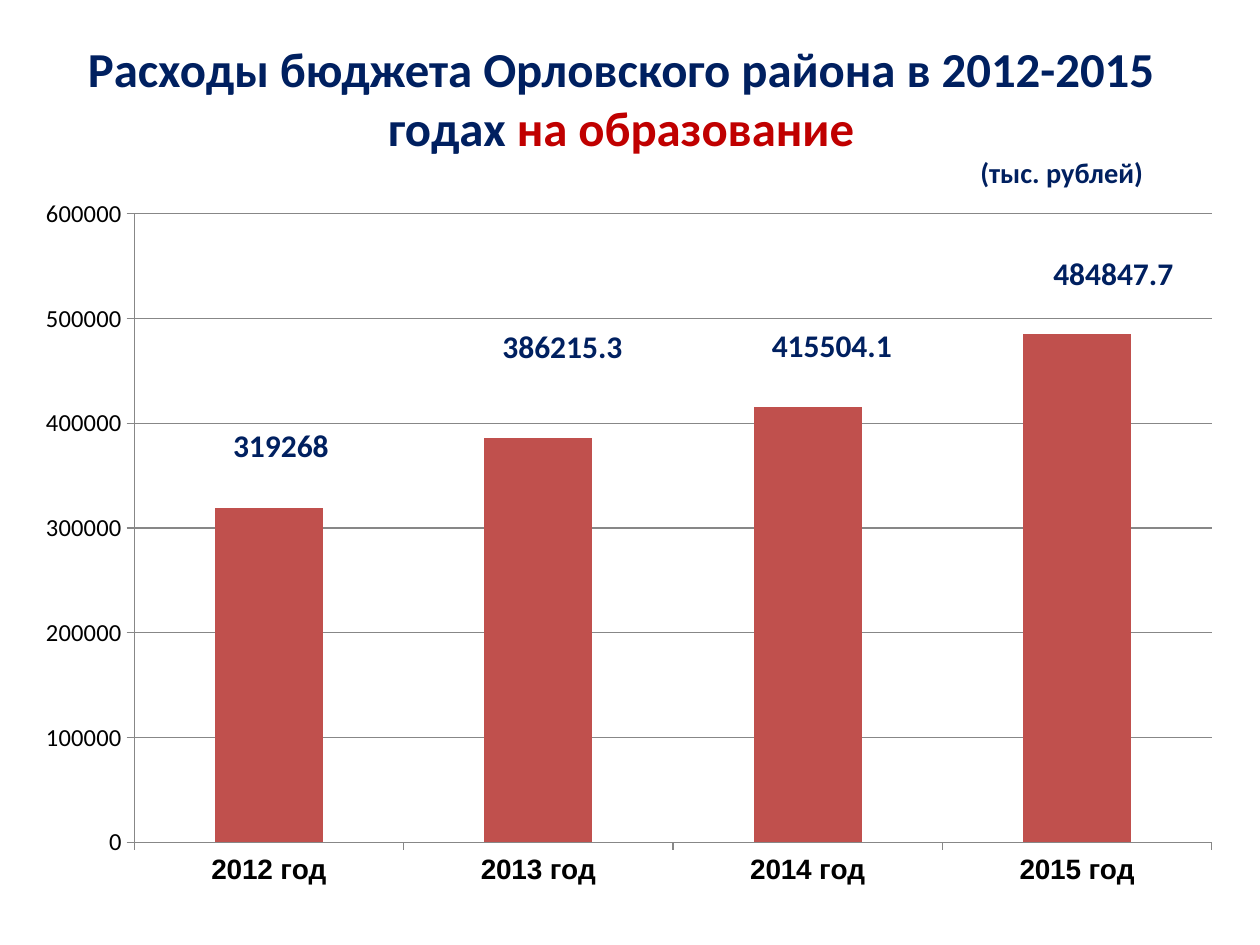
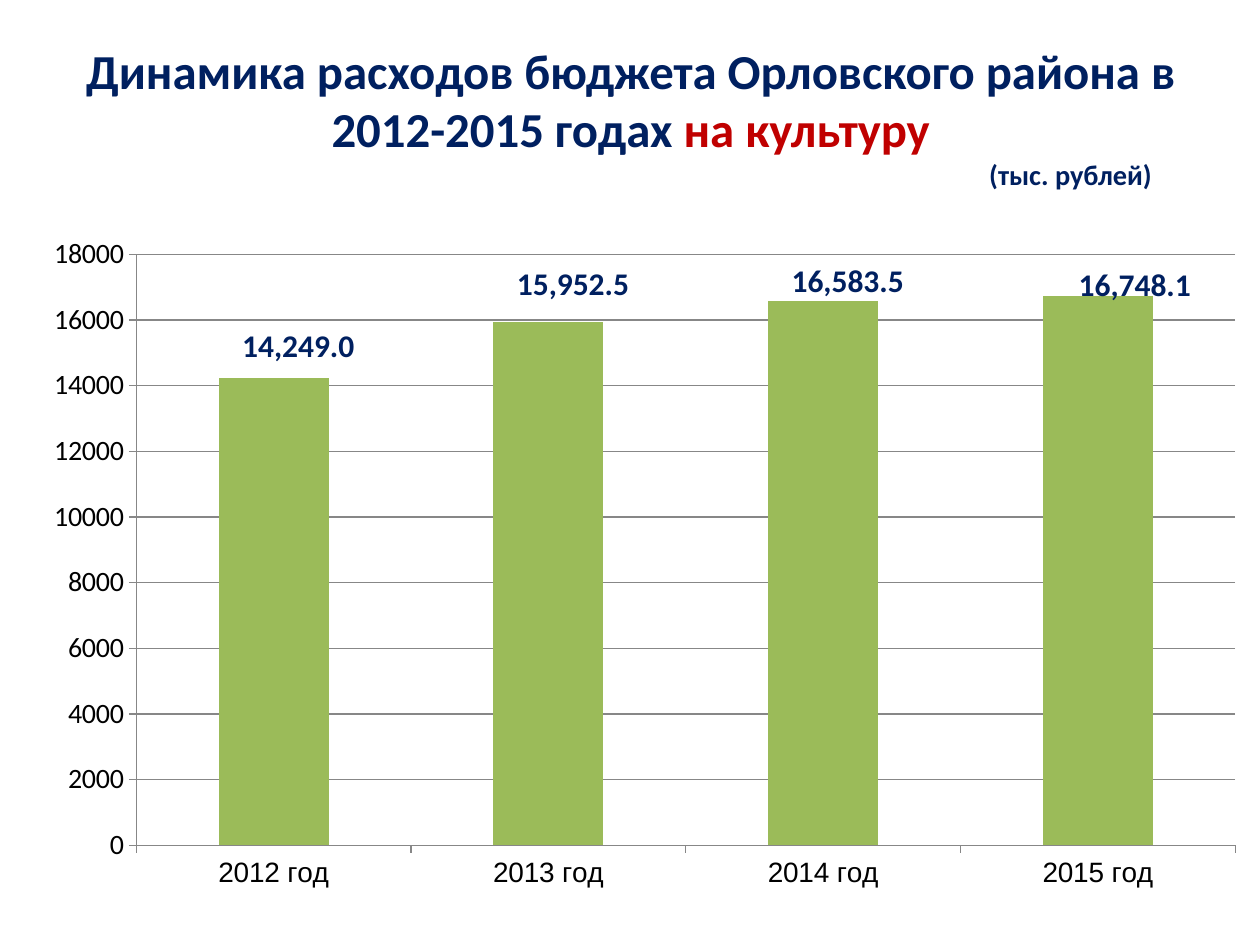
from lxml import etree
from pptx import Presentation
from pptx import util as u
from pptx.chart.data import CategoryChartData
from pptx.dml.color import RGBColor
from pptx.enum import chart as kinds, text
from pptx.oxml import ns

NAVY = RGBColor(0x00, 0x20, 0x60)
RED = RGBColor(0xC0, 0x00, 0x00)
BLACK = RGBColor(0x00, 0x00, 0x00)
GRAY = RGBColor(0x87, 0x87, 0x87)
BRICK = RGBColor(0xC0, 0x50, 0x4D)
GREEN = RGBColor(0x9B, 0xBB, 0x59)

COLS, ROWS = 100, 75
YEARS = [f"{year} год" for year in range(2012, 2016)]


def layout(places, inner=False):
    root = etree.Element(ns.qn("c:layout"))
    box = etree.SubElement(root, ns.qn("c:manualLayout"))
    if inner:
        etree.SubElement(box, ns.qn("c:layoutTarget"), val="inner")
        for side in "xy":
            etree.SubElement(box, ns.qn(f"c:{side}Mode"), val="edge")
    for side, share in zip("xywh", places):
        etree.SubElement(box, ns.qn(f"c:{side}"), val=str(share))
    return root


class Deck:
    """Holds the shared style and the current slide of a budget deck."""

    def __init__(self):
        self.prs = Presentation()
        self.prs.slide_width = u.Inches(10)
        self.prs.slide_height = u.Inches(7.5)
        self.slide = None

    def page(self):
        self.slide = self.prs.slides.add_slide(self.prs.slide_layouts[6])

    def area(self, left, top, wide, high):
        col = self.prs.slide_width / COLS
        row = self.prs.slide_height / ROWS
        return [u.Emu(round(n)) for n in (left * col, top * row, wide * col, high * row)]

    def style(self, font, size, color=BLACK, bold=False, face="Calibri"):
        font.name, font.size, font.bold = face, u.Pt(size), bold
        font.color.rgb = color

    def words(self, spot, parts, size, align):
        frame = self.slide.shapes.add_textbox(*self.area(*spot)).text_frame
        frame.word_wrap = True
        frame.vertical_anchor = text.MSO_ANCHOR.MIDDLE
        para = frame.paragraphs[0]
        para.alignment = align
        for part, color in parts:
            run = para.add_run()
            run.text = part
            self.style(run.font, size, color, True)

    def title(self, left, top, wide, lead, topic, edge):
        self.words((left, top, wide, 10.3), [(lead, NAVY), (topic, RED)],
                   27.9, text.PP_ALIGN.CENTER)
        self.words((edge - 25, top + 9.1, 25, 4), [("(тыс. рублей)", NAVY)],
                   16.2, text.PP_ALIGN.RIGHT)

    def axis(self, axis, size, bold=False, face="Calibri"):
        self.style(axis.tick_labels.font, size, bold=bold, face=face)
        axis.major_tick_mark = kinds.XL_TICK_MARK.OUTSIDE
        axis.minor_tick_mark = kinds.XL_TICK_MARK.NONE
        axis.format.line.color.rgb = GRAY
        axis.format.line.width = u.Pt(0.75)

    def labels(self, series, shifts, form):
        labels = series.data_labels
        labels.show_value = True
        labels.number_format, labels.number_format_is_linked = form, False
        self.style(labels.font, 18, NAVY, True)
        for i in range(len(shifts)):
            self.style(series.points[i].data_label.font, 18, NAVY, True)
        for label, shift in zip(series._element.xpath(".//c:dLbl"), shifts):
            label.insert(1, layout(shift))
            code = etree.Element(ns.qn("c:numFmt"), formatCode=form, sourceLinked="0")
            label.insert(2, code)
        for leader in series._element.xpath(".//c:showLeaderLines"):
            leader.set("val", "0")

    def bars(self, spot, vals, fill, top, step, inner, shifts,
             size, bold=False, form="General"):
        data = CategoryChartData()
        data.categories = YEARS
        data.add_series("Series 1", vals)
        chart = self.slide.shapes.add_chart(
            kinds.XL_CHART_TYPE.COLUMN_STACKED, *self.area(*spot), data).chart
        chart.has_legend = chart.has_title = False
        self.style(chart.font, 10)

        self.axis(chart.category_axis, 16, bold, "Arial")
        scale = chart.value_axis
        self.axis(scale, size)
        scale.minimum_scale, scale.maximum_scale, scale.major_unit = 0, top, step
        scale.has_major_gridlines = True
        scale.major_gridlines.format.line.color.rgb = GRAY
        scale.major_gridlines.format.line.width = u.Pt(0.75)

        plot = chart.plots[0]
        plot.gap_width, plot.overlap = 150, 100
        plot.vary_by_categories = False
        series = plot.series[0]
        series.format.fill.solid()
        series.format.fill.fore_color.rgb = fill
        self.labels(series, shifts, form)

        area = chart._chartSpace.chart.plotArea
        for old in area.findall(ns.qn("c:layout")):
            area.remove(old)
        area.insert(0, layout(inner, True))


def main():
    deck = Deck()

    deck.page()
    deck.title(4.3, 2.6, 90, "Расходы бюджета Орловского района в 2012-2015 годах ",
               "на образование", 91.7)
    deck.bars((2, 14.7, 96.1, 56.7), [319268, 386215.3, 415504.1, 484847.7], BRICK,
              600000, 100000, (0.09, 0.04, 0.89, 0.88),
              [(0.01, -0.32), (0.02, -0.41), (0.02, -0.39), (0.03, -0.44)],
              14, bold=True)

    deck.page()
    deck.title(2.8, 2.7, 94.5, "Динамика расходов бюджета Орловского района в 2012-2015 годах ",
               "на культуру", 92.4)
    deck.bars((2, 17.5, 98, 53.9), [14249, 15952.5, 16583.5, 16748.1], GREEN,
              18000, 2000, (0.09, 0.05, 0.89, 0.87),
              [(0.02, -0.39), (0.02, -0.44), (0.02, -0.43), (0.03, -0.42)],
              16, form="#,##0.0")

    deck.prs.save("out.pptx")


if __name__ == "__main__":
    main()
